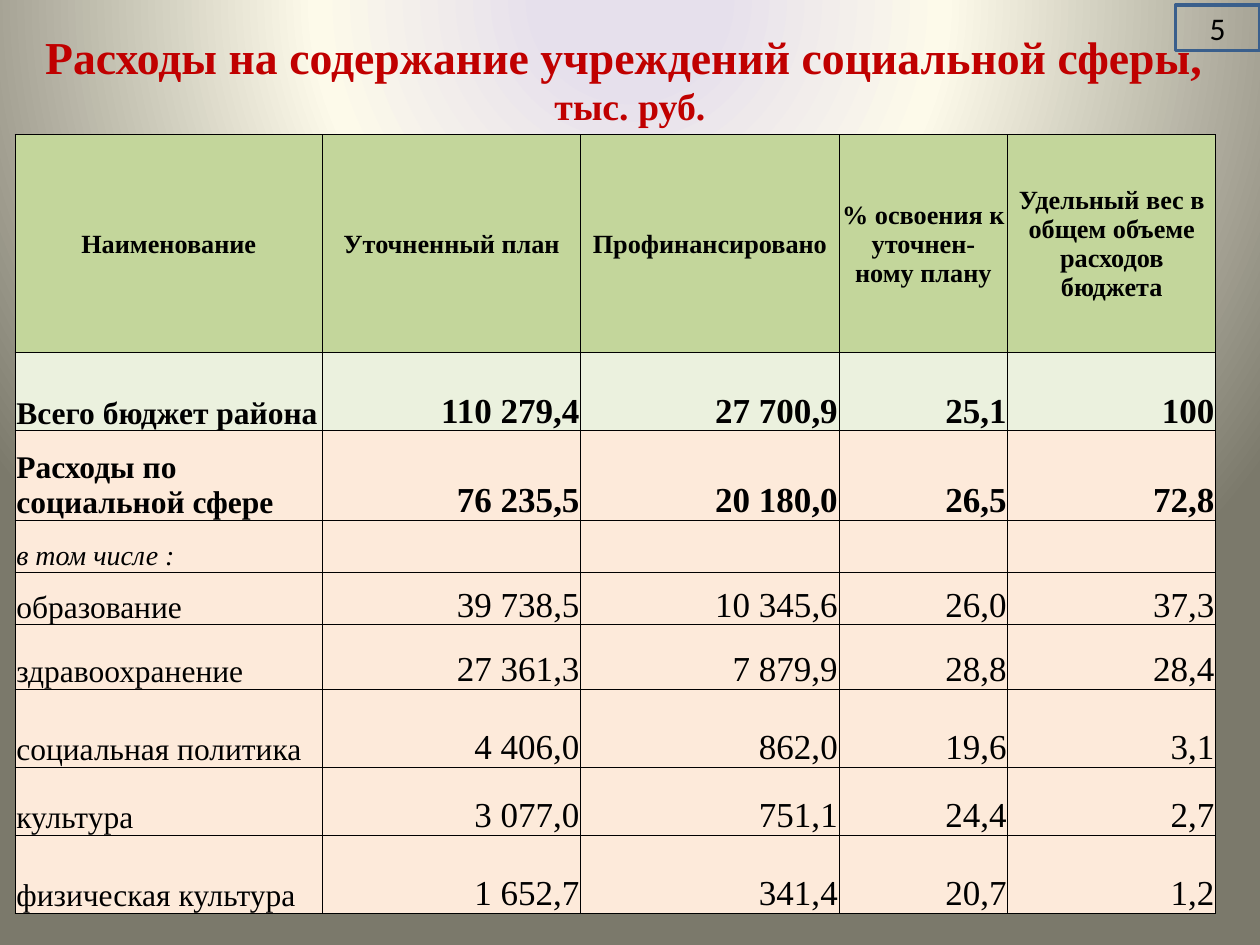
from pptx import Presentation
from pptx import oxml
from pptx.dml.color import RGBColor
from pptx.enum import shapes, text
from pptx.oxml import ns
from pptx.util import Inches, Pt

COLORS = {
    "title": "C00000", "ink": "000000", "number_line": "3A5F8C",
    "header": "C3D69B", "total": "EBF1DE", "social": "FDEADA",
    "glow": "E6E0EC", "cream": "FDFAEA", "edge": "7B796B",
}
SERIF = "Times New Roman"
COLUMN_WIDTHS = [2.44, 2.05, 2.05, 1.34, 1.65]
ROW_HEIGHTS = [1.73, 0.62, 0.71, 0.41, 0.42, 0.51, 0.62, 0.54, 0.62]
HEADINGS = ["Наименование", "Уточненный план", "Профинансировано",
            "% освоения к уточнен-\nному плану",
            "Удельный вес в общем объеме расходов бюджета"]
EXPENSES = [
    ["Всего бюджет района", "110 279,4", "27 700,9", "25,1", "100"],
    ["Расходы по социальной сфере", "76 235,5", "20 180,0", "26,5", "72,8"],
    ["в том числе :", "", "", "", ""],
    ["образование", "39 738,5", "10 345,6", "26,0", "37,3"],
    ["здравоохранение", "27 361,3", "7 879,9", "28,8", "28,4"],
    ["социальная политика", "4 406,0", "862,0", "19,6", "3,1"],
    ["культура", "3 077,0", "751,1", "24,4", "2,7"],
    ["физическая культура", "1 652,7", "341,4", "20,7", "1,2"],
]
TOTAL_ROW, SOCIAL_ROW, INCLUDING_ROW = 1, 2, 3


def rgb(name):
    """Return the named colour."""
    return RGBColor.from_string(COLORS[name])


def style_run(run, size, color="ink", face=SERIF, bold=False, italic=False):
    """Set the font of one run."""
    font = run.font
    font.name, font.size, font.bold, font.italic = face, Pt(size), bold, italic
    font.color.rgb = rgb(color)


def paint_background(slide):
    """Fill the background with a radial gradient centred on the top edge."""
    slide.background.fill.solid()
    properties = slide.element.xpath(".//p:bgPr")[0]
    stops = "".join(
        f'<a:gs pos="{percent * 1000}"><a:srgbClr val="{COLORS[name]}"/></a:gs>'
        for percent, name in [(11, "glow"), (40, "cream"), (100, "edge")])
    gradient = oxml.parse_xml(
        f'<a:gradFill {ns.nsdecls("a")} rotWithShape="1"><a:gsLst>{stops}</a:gsLst>'
        '<a:path path="circle"><a:fillToRect l="50000" t="-80000" r="50000" b="180000"/>'
        '</a:path></a:gradFill>')
    properties.replace(properties[0], gradient)


def add_title(slide):
    """Write the two-line title in the title placeholder."""
    title = slide.shapes.title
    title.left, title.top = Inches(0), Inches(0.13)
    title.width, title.height = Inches(10), Inches(0.94)
    frame = title.text_frame
    frame.text = "Расходы на содержание учреждений социальной сферы, \vтыс. руб."
    frame.auto_size = text.MSO_AUTO_SIZE.NONE
    frame.vertical_anchor = text.MSO_ANCHOR.BOTTOM
    heading = frame.paragraphs[0]
    heading.alignment = text.PP_ALIGN.CENTER
    for run, size in zip(heading.runs, [26.1, 21.6]):
        style_run(run, size, "title", bold=True)


def add_borders(cell):
    """Draw thin lines on all four sides of a cell."""
    properties = cell._tc.get_or_add_tcPr()
    for position, side in enumerate(["lnL", "lnR", "lnT", "lnB"]):
        properties.insert(position, oxml.parse_xml(
            f'<a:{side} {ns.nsdecls("a")} w="6350"><a:solidFill>'
            f'<a:srgbClr val="{COLORS["ink"]}"/></a:solidFill></a:{side}>'))


def cell_look(row, column):
    """Return the alignment and font settings for a table position."""
    if row == 0:
        return text.PP_ALIGN.CENTER, {"size": 15, "bold": True}
    bold = row in (TOTAL_ROW, SOCIAL_ROW)
    if column > 0:
        return text.PP_ALIGN.RIGHT, {"size": 20, "bold": bold}
    if row == INCLUDING_ROW:
        return text.PP_ALIGN.LEFT, {"size": 16, "italic": True}
    align = text.PP_ALIGN.LEFT if bold else text.PP_ALIGN.JUSTIFY
    return align, {"size": 18, "bold": bold}


def fill_cell(cell, wording, row, column):
    """Write and format one table cell."""
    cell.text = wording
    cell.margin_left = cell.margin_right = cell.margin_top = Inches(0.01)
    cell.margin_bottom = 0
    cell.vertical_anchor = text.MSO_ANCHOR.BOTTOM if row else text.MSO_ANCHOR.MIDDLE
    cell.fill.solid()
    cell.fill.fore_color.rgb = rgb({0: "header", TOTAL_ROW: "total"}.get(row, "social"))
    add_borders(cell)
    alignment, font = cell_look(row, column)
    for paragraph in cell.text_frame.paragraphs:
        paragraph.alignment = alignment
        for run in paragraph.runs:
            style_run(run, **font)


def add_expense_table(slide):
    """Add the table of social expenses."""
    expenses = slide.shapes.add_table(
        len(ROW_HEIGHTS), len(COLUMN_WIDTHS), Inches(0.12), Inches(1.07),
        Inches(sum(COLUMN_WIDTHS)), Inches(sum(ROW_HEIGHTS))).table
    expenses.first_row = expenses.horz_banding = False
    for column, width in zip(expenses.columns, COLUMN_WIDTHS):
        column.width = Inches(width)
    for row, height in zip(expenses.rows, ROW_HEIGHTS):
        row.height = Inches(height)
    for row, record in enumerate([HEADINGS] + EXPENSES):
        for column, wording in enumerate(record):
            fill_cell(expenses.cell(row, column), wording, row, column)


def add_page_number(slide):
    """Add the framed page number in the top right corner."""
    number = slide.shapes.add_shape(
        shapes.MSO_SHAPE.RECTANGLE, Inches(9.33), Inches(0.04), Inches(0.67), Inches(0.36))
    number.shadow.inherit = False
    number.fill.background()
    number.line.color.rgb = rgb("number_line")
    number.line.width = Pt(2)
    frame = number.text_frame
    frame.text = "5"
    frame.vertical_anchor = text.MSO_ANCHOR.MIDDLE
    frame.paragraphs[0].alignment = text.PP_ALIGN.CENTER
    style_run(frame.paragraphs[0].runs[0], 18, face="Calibri")


def main():
    """Build and save the slide."""
    deck = Presentation()
    deck.slide_width, deck.slide_height = Inches(10), Inches(7.5)
    slide = deck.slides.add_slide(deck.slide_layouts.get_by_name("Title Only"))
    paint_background(slide)
    add_title(slide)
    add_expense_table(slide)
    add_page_number(slide)
    deck.save("out.pptx")


if __name__ == "__main__":
    main()
